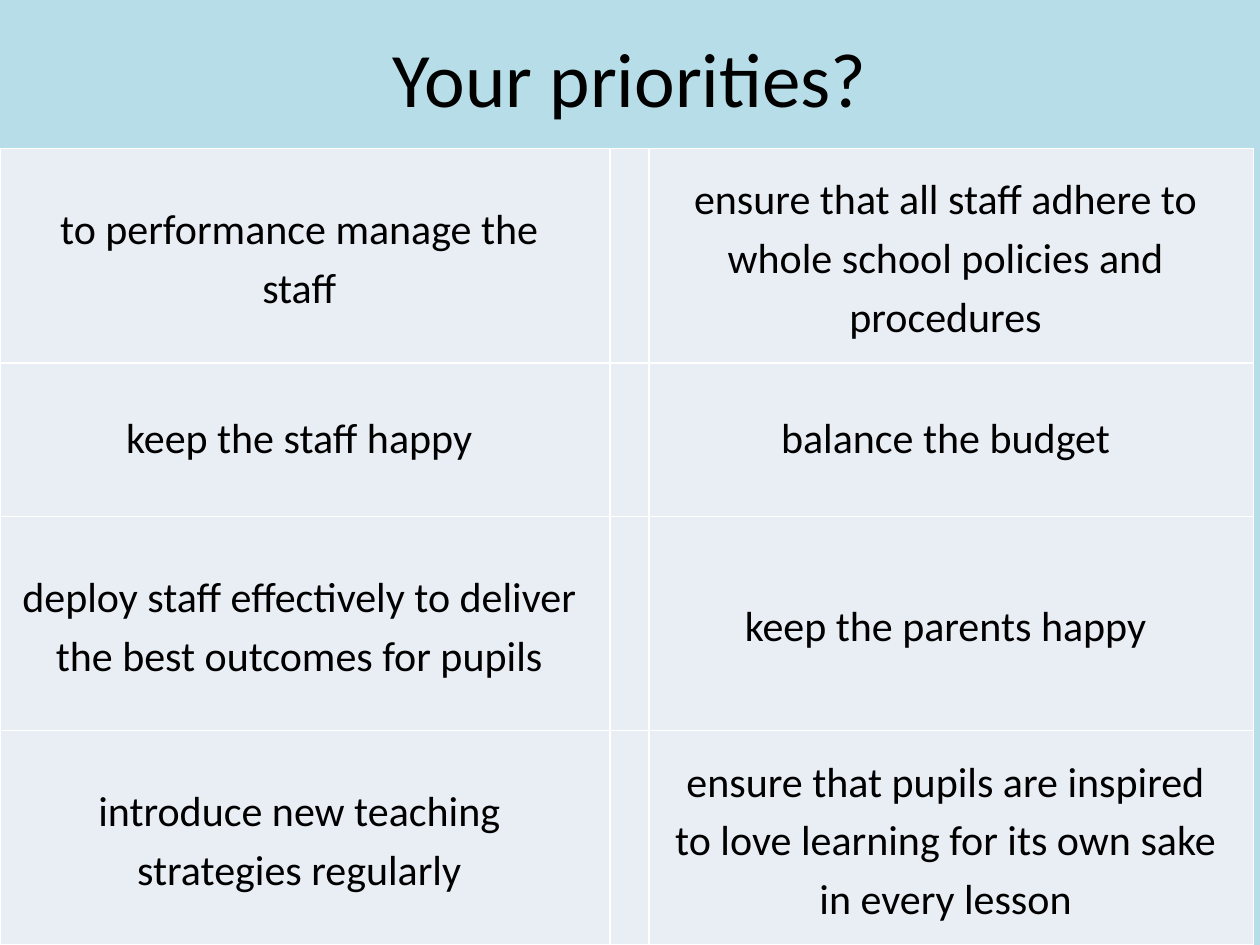
from lxml import etree
from pptx import Presentation
from pptx.dml.color import RGBColor
from pptx.enum.text import MSO_ANCHOR, PP_ALIGN
from pptx.oxml.ns import qn
from pptx.util import Inches, Pt

CENTER = PP_ALIGN.CENTER
MIDDLE = MSO_ANCHOR.MIDDLE

FONT = "Calibri"
BACKGROUND = "B7DEE8"
CELL_FILL = "E9EDF4"
WHITE = "FFFFFF"
BLACK = "000000"

COLUMN_WIDTHS = [4.84, 0.31, 4.8]
# Row height, line spacing, left priority, right priority
PRIORITIES = [
    (1.7, 1.15, "to performance manage the staff",
     "ensure that all staff adhere to whole school policies and procedures"),
    (1.22, 1.0, "keep the staff happy", "balance the budget"),
    (1.7, 1.15, "deploy staff effectively to deliver the best outcomes for pupils",
     "keep the parents happy"),
    (1.7, 1.15, "introduce new teaching strategies regularly",
     "ensure that pupils are inspired to love learning for its own sake in every lesson"),
]


def rgb(hex_color):
    return RGBColor.from_string(hex_color)


def add_run(p, text, size):
    p.alignment = CENTER
    r = p.add_run()
    r.text = text
    r.font.name = FONT
    r.font.size = Pt(size)
    r.font.color.rgb = rgb(BLACK)


def add_title(slide, text):
    box = slide.shapes.add_textbox(Inches(0.5), Inches(-0.02), Inches(9), Inches(1.25))
    tf = box.text_frame
    tf.word_wrap = True
    tf.vertical_anchor = MIDDLE
    add_run(tf.paragraphs[0], text, 44)


def style_cell(cell):
    """Give the cell its fill and a thin white border on every side."""
    tc_pr = cell._tc.get_or_add_tcPr()
    for side in ("a:lnL", "a:lnR", "a:lnT", "a:lnB"):
        ln = etree.SubElement(tc_pr, qn(side), w=str(Pt(1)))
        fill = etree.SubElement(ln, qn("a:solidFill"))
        etree.SubElement(fill, qn("a:srgbClr"), val=WHITE)
    cell.fill.solid()
    cell.fill.fore_color.rgb = rgb(CELL_FILL)


def write_priority(cell, text, line_spacing):
    cell.vertical_anchor = MIDDLE
    cell.margin_left = Inches(0.02)
    cell.margin_right = Inches(0.26)
    cell.margin_top = cell.margin_bottom = 0
    p = cell.text_frame.paragraphs[0]
    p.line_spacing = line_spacing
    p.space_after = Pt(10)
    add_run(p, text, 24)
    p_pr = p._p.get_or_add_pPr()
    p_pr.set("marL", str(Inches(0.15)))
    p_pr.set("indent", "0")


def add_priorities(slide):
    height = sum(row[0] for row in PRIORITIES)
    frame = slide.shapes.add_table(
        len(PRIORITIES), len(COLUMN_WIDTHS),
        Inches(0), Inches(1.18), Inches(sum(COLUMN_WIDTHS)), Inches(height))
    table = frame.table
    table.first_row = False
    table.horz_banding = False
    for column, width in zip(table.columns, COLUMN_WIDTHS):
        column.width = Inches(width)
    for row, (row_height, line_spacing, left, right) in zip(table.rows, PRIORITIES):
        row.height = Inches(row_height)
        for cell, text in zip(row.cells, (left, None, right)):
            style_cell(cell)
            if text:
                write_priority(cell, text, line_spacing)


def main():
    prs = Presentation()
    prs.slide_width = Inches(10)
    prs.slide_height = Inches(7.5)
    slide = prs.slides.add_slide(prs.slide_layouts[6])
    slide.background.fill.solid()
    slide.background.fill.fore_color.rgb = rgb(BACKGROUND)
    add_title(slide, "Your priorities?")
    add_priorities(slide)
    prs.save("out.pptx")


if __name__ == "__main__":
    main()
